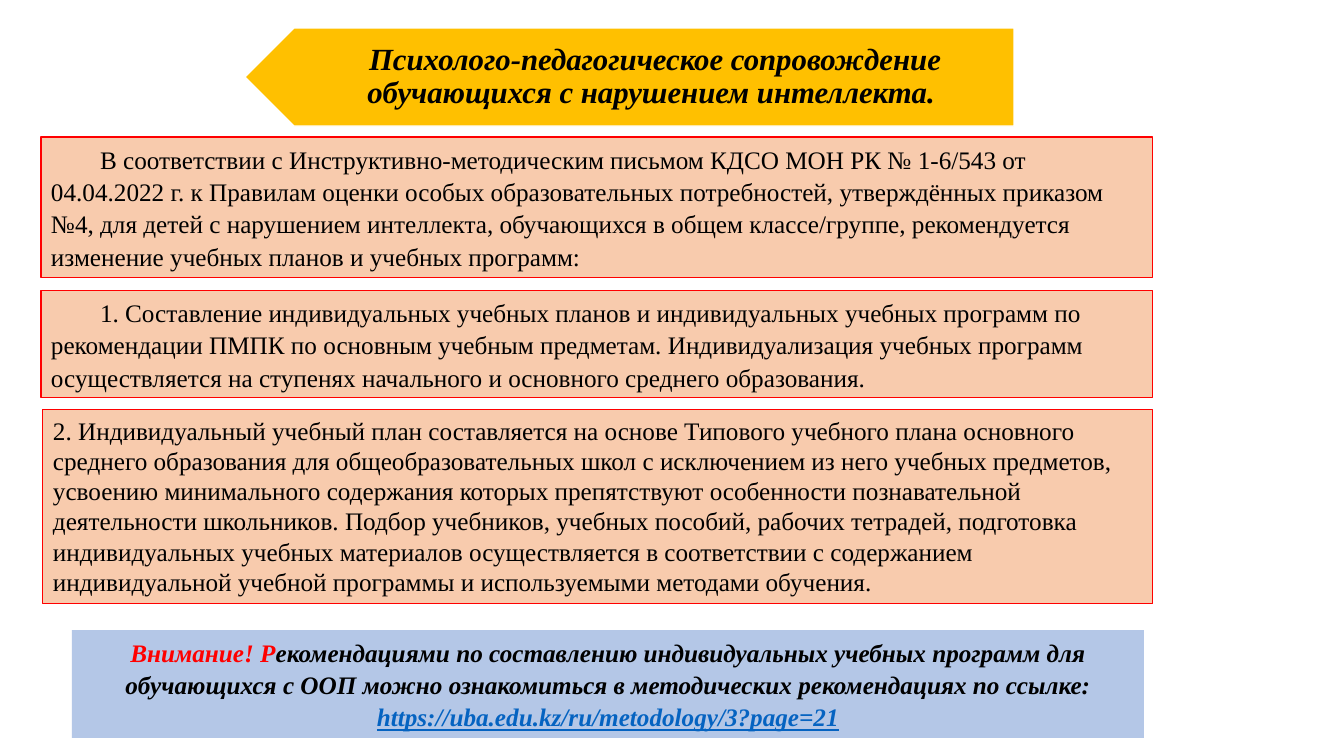
from dataclasses import dataclass

from pptx import Presentation
from pptx.dml.color import RGBColor
from pptx.enum.shapes import MSO_SHAPE
from pptx.enum.text import MSO_ANCHOR, PP_ALIGN
from pptx.util import Pt

SCALE = 914400 / 100.8


@dataclass(frozen=True)
class Theme:
    font: str = "Times New Roman"
    title: int = 22
    body: int = 18
    ink: str = "000000"
    alert: str = "FF0000"
    link: str = "0563C1"
    paper: str = "FFFFFF"
    gold: str = "FFC000"
    peach: str = "F8CBAD"
    blue: str = "B4C7E7"


THEME = Theme()

TITLE = "Психолого-педагогическое сопровождение обучающихся с нарушением интеллекта. "
INTRO = (
    "В соответствии с Инструктивно-методическим письмом КДСО МОН РК № 1-6/543 от "
    "04.04.2022 г. к Правилам оценки особых образовательных потребностей, утверждённых "
    "приказом №4, для детей с нарушением интеллекта, обучающихся в общем классе/группе, "
    "рекомендуется изменение учебных планов и учебных программ:"
)
FIRST = (
    "1. Составление индивидуальных учебных планов и индивидуальных учебных программ по "
    "рекомендации ПМПК по основным учебным предметам. Индивидуализация учебных программ "
    "осуществляется на ступенях начального и основного среднего образования."
)
SECOND = (
    "2. Индивидуальный учебный план составляется на основе Типового учебного плана "
    "основного среднего образования для общеобразовательных школ с исключением из него "
    "учебных предметов, усвоению минимального содержания которых препятствуют особенности "
    "познавательной деятельности школьников. Подбор учебников, учебных пособий, рабочих "
    "тетрадей, подготовка индивидуальных учебных материалов осуществляется в соответствии "
    "с содержанием индивидуальной учебной программы и используемыми методами обучения."
)
NOTICE = (
    ("Внимание! Р", THEME.alert),
    ("екомендациями по составлению индивидуальных учебных программ для обучающихся с ООП "
     "можно ознакомиться в методических рекомендациях по ссылке: ", THEME.ink),
    ("https://uba.edu.kz/ru/metodology/3?page=21", THEME.link),
)


def px(count):
    return round(count * SCALE)


def color(code):
    return RGBColor.from_string(code)


def add_block(slide, kind, box, fill, line=None, width=0.75):
    shape = slide.shapes.add_shape(kind, *map(px, box))
    shape.shadow.inherit = False
    shape.fill.solid()
    shape.fill.fore_color.rgb = color(fill)
    if line:
        shape.line.color.rgb = color(line)
        shape.line.width = Pt(width)
    else:
        shape.line.fill.background()
    return shape


def set_frame(shape, anchor, left=10, right=10, edge=5):
    frame = shape.text_frame
    frame.word_wrap = True
    frame.vertical_anchor = anchor
    frame.margin_left, frame.margin_right = px(left), px(right)
    frame.margin_top = frame.margin_bottom = px(edge)
    return frame.paragraphs[0]


def add_run(para, text, size, ink=THEME.ink, strong=False):
    run = para.add_run()
    run.text = text
    font = run.font
    font.name, font.size = THEME.font, Pt(size)
    font.bold = font.italic = strong
    font.color.rgb = color(ink)
    return run


def add_banner(slide, box):
    """Left-pointing arrow with the title centred right of its tip."""
    left, top, width, height = box
    arrow = add_block(slide, MSO_SHAPE.PENTAGON, box, THEME.gold, THEME.paper, 1)
    arrow.rotation = 180
    inset = 25
    label = slide.shapes.add_textbox(
        *map(px, (left + inset, top, width - inset, height)))
    para = set_frame(label, MSO_ANCHOR.MIDDLE, 43, 17, 9)
    para.alignment = PP_ALIGN.CENTER
    para.line_spacing = 0.9
    add_run(para, TITLE, THEME.title, strong=True)


def add_panel(slide, box, text, indent):
    """Red-edged panel; an indented one also has looser lines."""
    panel = add_block(slide, MSO_SHAPE.RECTANGLE, box, THEME.peach, THEME.alert)
    para = set_frame(panel, MSO_ANCHOR.TOP)
    para.alignment = PP_ALIGN.LEFT
    if indent:
        para.line_spacing = 1.07
        para.space_after = Pt(8)
        props = para._p.get_or_add_pPr()
        props.set("marL", "0")
        props.set("indent", str(px(indent)))
    add_run(para, text, THEME.body)


def add_notice(slide, box):
    panel = add_block(slide, MSO_SHAPE.RECTANGLE, box, THEME.blue)
    para = set_frame(panel, MSO_ANCHOR.TOP)
    para.alignment = PP_ALIGN.CENTER
    para.line_spacing = 1.07
    para.space_after = Pt(8)
    for text, ink in NOTICE:
        run = add_run(para, text, THEME.body, ink, True)
        run.font.underline = ink == THEME.link


def main():
    deck = Presentation()
    deck.slide_width, deck.slide_height = px(1344), px(756)
    slide = deck.slides.add_slide(deck.slide_layouts[6])
    add_banner(slide, (245, 28, 769, 98))
    right, top, gap = 1153, 137, 12
    for text, left, height, indent in (
        (INTRO, 41, 141, 49),
        (FIRST, 41, 108, 49),
        (SECOND, 43, 194, 0),
    ):
        add_panel(slide, (left, top, right - left, height), text, indent)
        top += height + gap
    add_notice(slide, (72, 630, 1072, 108))
    deck.save("out.pptx")


if __name__ == "__main__":
    main()
